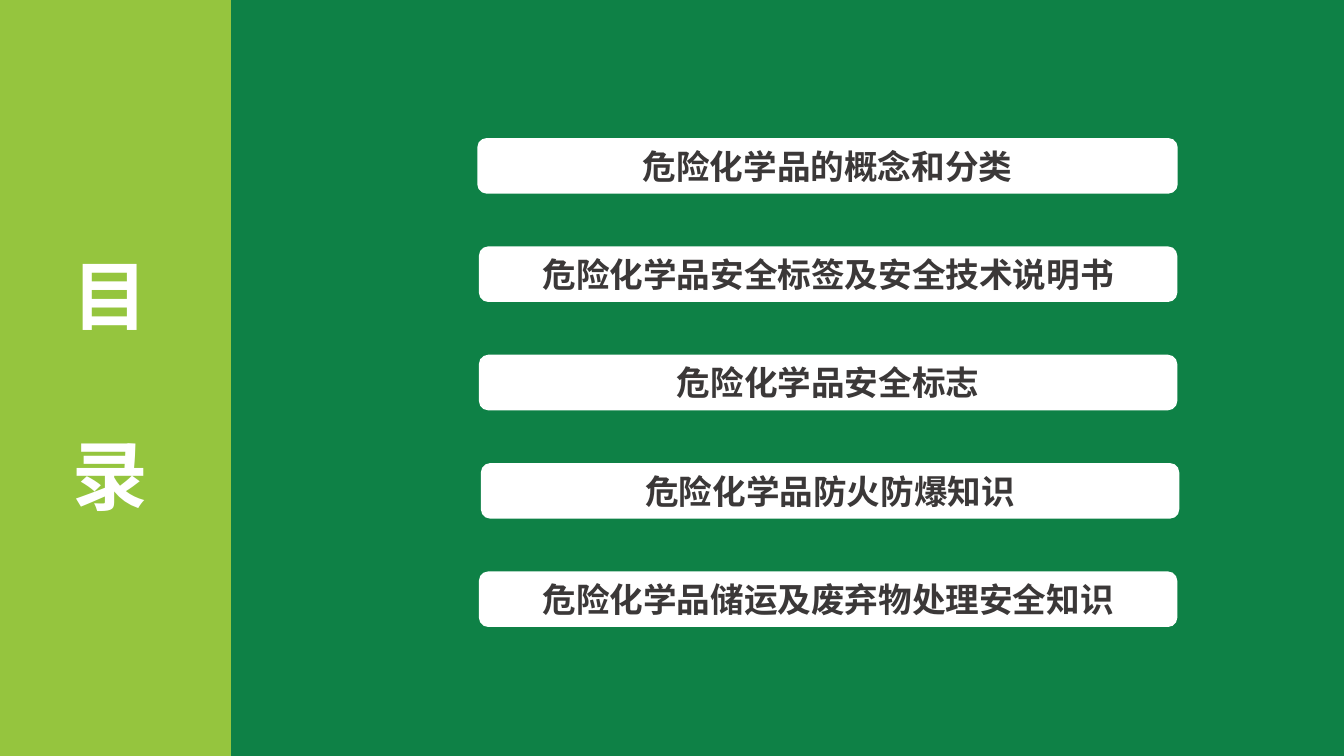
from dataclasses import dataclass
from pptx import Presentation
from pptx.dml.color import RGBColor as RGB
from pptx.enum.shapes import MSO_SHAPE as Kind
from pptx.enum.text import MSO_ANCHOR as Anchor, MSO_AUTO_SIZE as Fit, PP_ALIGN as Align
from pptx.oxml.ns import qn
from pptx.util import Cm, Pt
from lxml.etree import SubElement


@dataclass(frozen=True)
class Theme:
    back: RGB = RGB(0x0E, 0x81, 0x46)
    band: RGB = RGB(0x95, 0xC5, 0x3E)
    white: RGB = RGB(0xFF, 0xFF, 0xFF)
    ink: RGB = RGB(0x3B, 0x38, 0x38)
    face: str = "Noto Sans CJK SC"
    head: Pt = Pt(54)
    item: Pt = Pt(24)


theme = Theme()


def add_box(kind, left, top, width, height, fill):
    box = slide.shapes.add_shape(kind, Cm(left), Cm(top), Cm(width), Cm(height))
    box.shadow.inherit = False
    box.fill.solid()
    box.fill.fore_color.rgb = fill
    box.line.fill.background()
    return box


def put_text(frame, lines, size, color, anchor):
    style = {"margin_left": 0, "margin_right": 0, "margin_top": 0, "margin_bottom": 0,
             "word_wrap": False, "auto_size": Fit.NONE, "vertical_anchor": anchor}
    for name, value in style.items():
        setattr(frame, name, value)
    frame.text = "\n".join(lines)
    for para in frame.paragraphs:
        para.alignment = Align.CENTER
        font = para.runs[0].font
        for name, value in {"name": theme.face, "size": size, "bold": True}.items():
            setattr(font, name, value)
        font.color.rgb = color
        SubElement(para.runs[0].font._element, qn("a:ea"), typeface=theme.face)


deck = Presentation()
deck.slide_width, deck.slide_height = Cm(33.87), Cm(19.05)
slide = deck.slides.add_slide(deck.slide_layouts[5])
slide.background.fill.solid()
slide.background.fill.fore_color.rgb = theme.back

band = add_box(Kind.RECTANGLE, 0, 0, 5.82, 19.05, theme.band)

title = slide.shapes.title
band.element.addnext(title.element)
place = {"left": Cm(1.58), "top": Cm(6.3), "width": Cm(2.4), "height": Cm(6.85)}
for name, value in place.items():
    setattr(title, name, value)
put_text(title.text_frame, ["目", "录"], theme.head, theme.white, Anchor.TOP)
for para, gap in zip(title.text_frame.paragraphs, (0, 64.5)):
    para.line_spacing = Pt(64)
    para.space_before = Pt(gap)

items = [
    ("危险化学品的概念和分类", 12.03, 17.65),
    ("危险化学品安全标签及安全技术说明书", 12.07, 17.6),
    ("危险化学品安全标志", 12.07, 17.6),
    ("危险化学品防火防爆知识", 12.12, 17.6),
    ("危险化学品储运及废弃物处理安全知识", 12.07, 17.6),
]
for row, (text, left, width) in enumerate(items):
    bar = add_box(Kind.ROUNDED_RECTANGLE, left, 3.48 + 2.73 * row, width, 1.4, theme.white)
    bar.adjustments[0] = 0.167
    put_text(bar.text_frame, [text], theme.item, theme.ink, Anchor.MIDDLE)

deck.save("out.pptx")
